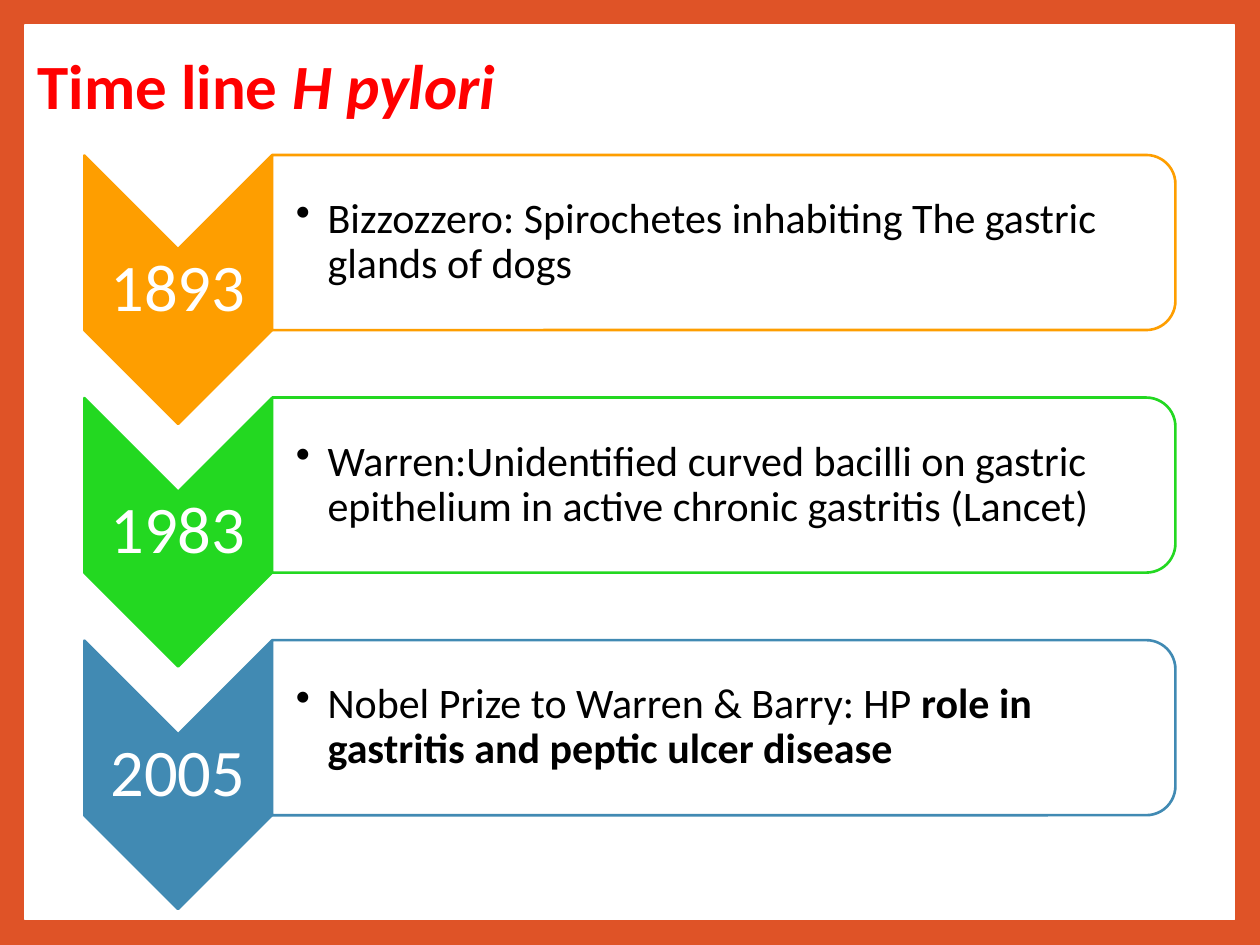
from dataclasses import dataclass

from lxml.etree import SubElement
from pptx import Presentation
from pptx.dml.color import RGBColor
from pptx.enum.shapes import MSO_SHAPE
from pptx.enum.text import MSO_ANCHOR, PP_ALIGN
from pptx.oxml.ns import qn
from pptx.util import Cm, Pt

TITLE = [("Time line ", "b"), ("H pylori", "bi")]
EVENTS = [
    ("1893", "FE9E00", [("Bizzozzero: Spirochetes inhabiting The gastric glands of dogs", "")]),
    ("1983", "23D821", [("Warren:Unidentified curved bacilli on gastric epithelium "
                         "in active chronic gastritis (Lancet)", "")]),
    ("2005", "418AB3", [("Nobel Prize to Warren & Barry: HP ", ""),
                        ("role in gastritis and peptic ulcer disease", "b")]),
]
SLIDE_WIDTH, SLIDE_HEIGHT = 25.4, 19.05
FRAME = 0.51
YEAR_X, CARD_X, CARD_TEXT_X = 3.59, 14.59, 14.5
FIRST_YEAR_Y, FIRST_CARD_Y, ROW_PITCH = 5.84, 4.89, 4.89
BULLET_INDENT = 0.64


@dataclass(frozen=True)
class Theme:
    font: str = "Calibri"
    border: str = "DF5327"
    paper: str = "FFFFFF"
    title: str = "FF0000"
    body: str = "000000"
    title_size: int = 36
    year_size: int = 38
    body_size: int = 24
    card_opacity: int = 90


THEME = Theme()


def centred(x, y, width, height):
    return Cm(x - width / 2), Cm(y - height / 2), Cm(width), Cm(height)


def add_shape(slide, kind, bounds, fill, line, weight, rotation=0):
    shape = slide.shapes.add_shape(kind, *bounds)
    shape.shadow.inherit = False
    shape.rotation = rotation
    shape.fill.solid()
    shape.fill.fore_color.rgb = RGBColor.from_string(fill)
    shape.line.color.rgb = RGBColor.from_string(line)
    shape.line.width = Pt(weight)
    return shape


def add_text(slide, bounds, runs, size, color, insets, align=PP_ALIGN.LEFT, bullet=False):
    frame = slide.shapes.add_textbox(*bounds).text_frame
    frame.word_wrap = True
    frame.vertical_anchor = MSO_ANCHOR.MIDDLE
    left, others = insets
    frame.margin_left = Cm(left)
    frame.margin_top = frame.margin_right = frame.margin_bottom = Cm(others)
    para = frame.paragraphs[0]
    para.alignment = align
    para.line_spacing = 0.9
    if bullet:
        properties = para._p.get_or_add_pPr()
        properties.set("marL", str(Cm(BULLET_INDENT)))
        properties.set("indent", str(-Cm(BULLET_INDENT)))
        SubElement(properties, qn("a:buChar"), char="•")
    for text, style in runs:
        span = para.add_run()
        span.text = text
        span.font.name = THEME.font
        span.font.size = Pt(size)
        span.font.bold = "b" in style
        span.font.italic = "i" in style
        span.font.color.rgb = RGBColor.from_string(color)


def add_event(slide, row, year, color, runs):
    year_y = FIRST_YEAR_Y + row * ROW_PITCH
    card_y = FIRST_CARD_Y + row * ROW_PITCH
    add_shape(slide, MSO_SHAPE.CHEVRON, centred(YEAR_X, year_y, 5.41, 3.78), color, color, 1.5, 90)
    add_text(slide, centred(YEAR_X, year_y, 3.78, 1.63), [(year, "")],
             THEME.year_size, THEME.paper, (0.08, 0.08), PP_ALIGN.CENTER)
    card = add_shape(slide, MSO_SHAPE.ROUND_2_SAME_RECTANGLE,
                     centred(CARD_X, card_y, 3.53, 18.21), THEME.paper, color, 1.5, 90)
    fill_color = card._element.spPr.find(qn("a:solidFill"))[0]
    SubElement(fill_color, qn("a:alpha"), val=str(THEME.card_opacity * 1000))
    add_text(slide, centred(CARD_TEXT_X, card_y, 18.03, 3.18), runs,
             THEME.body_size, THEME.body, (0.48, 0.05), bullet=True)


def main():
    """Build the H pylori timeline slide."""
    deck = Presentation()
    deck.slide_width, deck.slide_height = Cm(SLIDE_WIDTH), Cm(SLIDE_HEIGHT)
    page = deck.slides.add_slide(deck.slide_layouts[6])
    page.background.fill.solid()
    page.background.fill.fore_color.rgb = RGBColor.from_string(THEME.border)
    panel = centred(SLIDE_WIDTH / 2, SLIDE_HEIGHT / 2,
                    SLIDE_WIDTH - 2 * FRAME, SLIDE_HEIGHT - 2 * FRAME)
    add_shape(page, MSO_SHAPE.RECTANGLE, panel, THEME.paper, THEME.paper, 1)
    add_text(page, (Cm(FRAME), Cm(-0.08), Cm(20.57), Cm(3.76)), TITLE,
             THEME.title_size, THEME.title, (0.25, 0.13))
    for row, event in enumerate(EVENTS):
        add_event(page, row, *event)
    deck.save("out.pptx")


if __name__ == "__main__":
    main()
